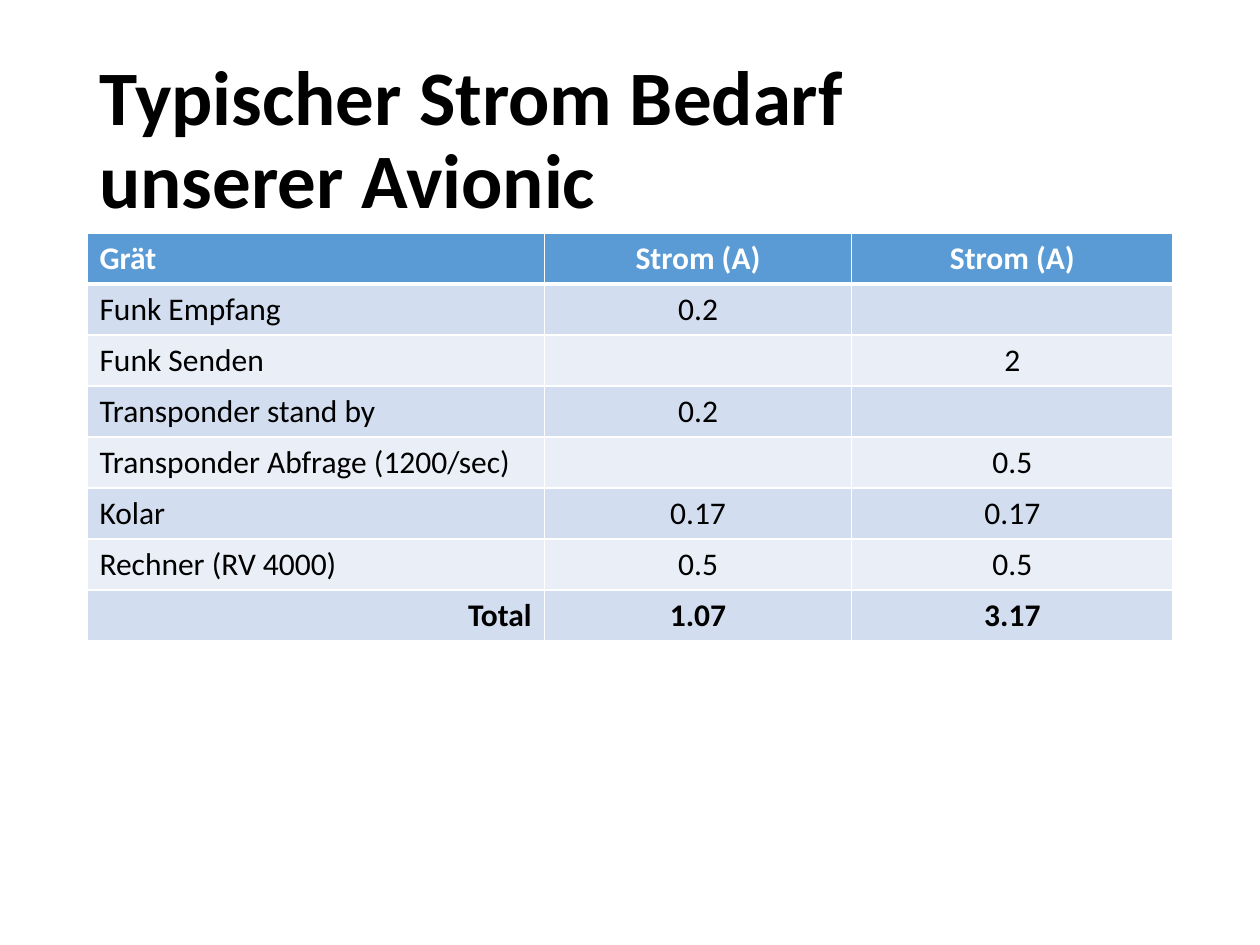
from lxml.etree import SubElement
from pptx import Presentation
from pptx.dml.color import RGBColor
from pptx.enum.text import MSO_ANCHOR, PP_ALIGN
from pptx.oxml.ns import qn
from pptx.util import Inches, Pt

TITLE = "Typischer Strom Bedarf \nunserer Avionic"
CURRENTS = [
    ("Grät", "Strom (A)", "Strom (A)"),
    ("Funk Empfang", "0.2", ""),
    ("Funk Senden", "", "2"),
    ("Transponder stand by", "0.2", ""),
    ("Transponder Abfrage (1200/sec)", "", "0.5"),
    ("Kolar", "0.17", "0.17"),
    ("Rechner (RV 4000)", "0.5", "0.5"),
    ("Total", "1.07", "3.17"),
]
COLUMN_WIDTHS = [3.63, 2.44, 2.55]
LEFT, WIDTH = 0.69, sum(COLUMN_WIDTHS)
TITLE_TOP, TITLE_HEIGHT = 0.4, 1.45
TABLE_TOP, TABLE_HEIGHT = 1.85, 3.24
HEADER_FILL, BAND_FILLS = "5B9BD5", ("EAEFF7", "D2DEEF")
WHITE, BLACK = "FFFFFF", "000000"


def color(value):
    """Turn a hex string into a colour."""
    return RGBColor.from_string(value)


def write(frame, text, size=18, ink=BLACK, bold=False, align=PP_ALIGN.LEFT, spacing=None):
    """Fill a text frame with one formatted paragraph."""
    paragraph = frame.paragraphs[0]
    paragraph.text = text
    paragraph.alignment = align
    paragraph.line_spacing = spacing
    for run in paragraph.runs:
        run.font.name = "Calibri"
        run.font.size = Pt(size)
        run.font.bold = bold
        run.font.color.rgb = color(ink)


def add_borders(cell, **widths):
    """Draw white cell borders, with widths in points by side."""
    properties = cell._tc.get_or_add_tcPr()
    for position, side in enumerate("LRTB"):
        line = SubElement(properties, qn(f"a:ln{side}"), w=str(Pt(widths.get(side, 1))))
        fill = SubElement(line, qn("a:solidFill"))
        SubElement(fill, qn("a:srgbClr"), val=WHITE)
        properties.insert(position, line)


def add_title(slide):
    """Place the slide title."""
    title = slide.shapes.add_textbox(
        Inches(LEFT), Inches(TITLE_TOP), Inches(WIDTH), Inches(TITLE_HEIGHT))
    title.text_frame.word_wrap = True
    title.text_frame.vertical_anchor = MSO_ANCHOR.MIDDLE
    write(title.text_frame, TITLE, size=44, bold=True, spacing=0.9)


def add_currents(slide):
    """Place the table of currents."""
    table = slide.shapes.add_table(
        len(CURRENTS), len(COLUMN_WIDTHS), Inches(LEFT), Inches(TABLE_TOP),
        Inches(WIDTH), Inches(TABLE_HEIGHT)).table
    for column, width in zip(table.columns, COLUMN_WIDTHS):
        column.width = Inches(width)
    total = len(CURRENTS) - 1
    for row, entries in enumerate(CURRENTS):
        header = row == 0
        label_align = PP_ALIGN.RIGHT if row == total else PP_ALIGN.LEFT
        for column, entry in enumerate(entries):
            cell = table.cell(row, column)
            cell.fill.solid()
            cell.fill.fore_color.rgb = color(HEADER_FILL if header else BAND_FILLS[row % 2])
            add_borders(cell, T=3 if row == 1 else 1, B=3 if header else 1)
            write(cell.text_frame, entry, ink=WHITE if header else BLACK,
                  bold=row in (0, total), align=PP_ALIGN.CENTER if column else label_align)


def main():
    """Build and save the slide."""
    deck = Presentation()
    deck.slide_width, deck.slide_height = Inches(10), Inches(7.5)
    slide = deck.slides.add_slide(deck.slide_layouts[6])
    add_title(slide)
    add_currents(slide)
    deck.save("out.pptx")


if __name__ == "__main__":
    main()
